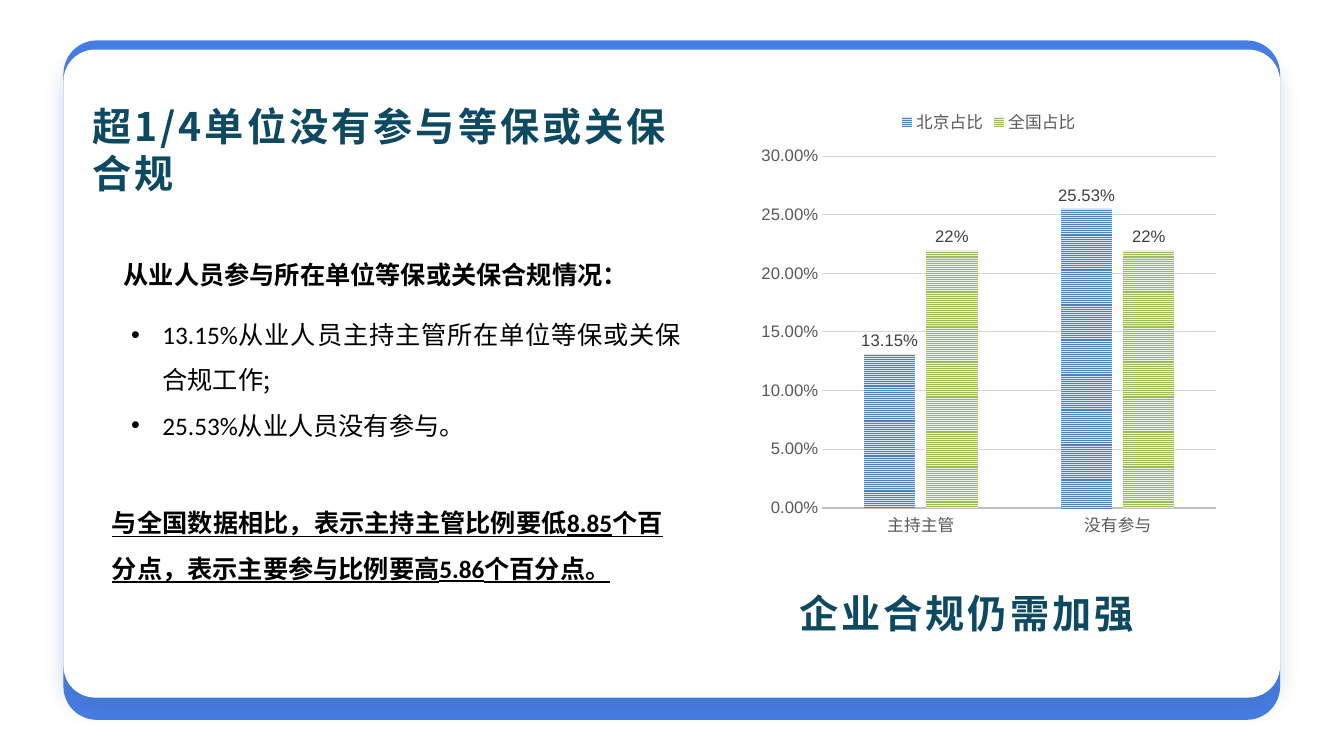
from dataclasses import dataclass

import pptx
import pptx.chart.data
import pptx.dml.color
import pptx.enum.chart
import pptx.enum.dml
import pptx.enum.shapes
import pptx.enum.text
import pptx.oxml
import pptx.oxml.ns
import pptx.util
from pptx.util import Cm, Pt


@dataclass(frozen=True)
class Theme:
    cjk: str = "Noto Sans CJK SC"
    latin: str = "Calibri"
    chart_face: str = "Arial"
    blue: str = "477EE5"
    white: str = "FFFFFF"
    black: str = "000000"
    teal: str = "0D4960"
    axis_text: str = "595959"
    label_text: str = "404040"
    axis_line: str = "BFBFBF"
    grid_line: str = "D9D9D9"
    title_size: float = 28
    body_size: float = 18
    chart_size: float = 11.9


THEME = Theme()
qn = pptx.oxml.ns.qn
ALIGN = pptx.enum.text.PP_ALIGN

TITLE = [[("超1/4单位没有参与等保或关保合规", THEME.cjk)]]
CONCLUSION = [[("企业合规仍需加强", THEME.cjk)]]
HEADING = [[("从业人员参与所在单位等保或关保合规情况：", THEME.cjk)]]
FINDINGS = [
    [("13.15%", THEME.latin), ("从业人员主持主管所在单位等保或关保合规工作;", THEME.cjk)],
    [("25.53%", THEME.latin), ("从业人员没有参与。", THEME.cjk)],
]
COMPARISON = [[
    ("与全国数据相比，表示主持主管比例要低", THEME.cjk),
    ("8.85", THEME.latin),
    ("个百分点，表示主要参与比例要高", THEME.cjk),
    ("5.86", THEME.latin),
    ("个百分点。", THEME.cjk),
]]
CATEGORIES = ["主持主管", "没有参与"]
SERIES = [
    ("北京占比", (0.1315, 0.2553), "0.00%", "4F81BD", "DCE6F2"),
    ("全国占比", (0.22, 0.22), "0%", "9BBB59", "EBF1DE"),
]
CARDS = [
    ((1.6, 1.02, 30.66, 17.12), THEME.blue),
    ((1.6, 1.25, 30.66, 16.33), THEME.white),
]
BOXES = {
    "title": (2.16, 2.49, 15.24, 2.54),
    "heading": (2.03, 6.02, 14.38, 1.27),
    "findings": (3.05, 7.54, 14.38, 3.58),
    "comparison": (2.57, 12.29, 14.38, 2.44),
    "conclusion": (18.95, 14.73, 10.82, 1.45),
    "chart": (18.95, 2.46, 11.94, 11.3),
}
SHADOW = (
    '<a:effectLst xmlns:a="http://schemas.openxmlformats.org/drawingml/2006/main">'
    f'<a:outerShdw blurRad="{Pt(16)}" dist="{Pt(8)}" dir="5400000" algn="t" rotWithShape="0">'
    '<a:srgbClr val="376092"><a:alpha val="23000"/></a:srgbClr>'
    "</a:outerShdw></a:effectLst>"
)


def rgb(value):
    return pptx.dml.color.RGBColor.from_string(value)


def lengths(name):
    return [Cm(value) for value in BOXES[name]]


def place(shape, name):
    shape.left, shape.top, shape.width, shape.height = lengths(name)
    return shape


def style(font, size, color, face=None, bold=None):
    font.size, font.color.rgb, font.bold = Pt(size), rgb(color), bold
    if face:
        font.name = face


def write(box, paragraphs, size=THEME.body_size, color=THEME.black, bold=True,
          underline=None, align=ALIGN.JUSTIFY, line_spacing=1.5,
          margin=0, indent=0, bullet=False, tracking=None):
    frame = box.text_frame
    frame.word_wrap = True
    frame.auto_size = pptx.enum.text.MSO_AUTO_SIZE.SHAPE_TO_FIT_TEXT
    frame.vertical_anchor = pptx.enum.text.MSO_ANCHOR.TOP
    for index, spans in enumerate(paragraphs):
        para = frame.paragraphs[0] if index == 0 else frame.add_paragraph()
        para.alignment, para.line_spacing = align, line_spacing
        para.space_before = Pt(0)
        props = para._p.get_or_add_pPr()
        props.set("marL", str(Cm(margin)))
        props.set("indent", str(Cm(indent)))
        if bullet:
            props.append(props.makeelement(qn("a:buFont"), {"typeface": THEME.chart_face}))
            props.append(props.makeelement(qn("a:buChar"), {"char": "•"}))
        faces = {face for _, face in spans}
        style(para.font, size, color, spans[0][1] if len(faces) == 1 else None, bold)
        para.font.underline = underline
        if tracking:
            props.find(qn("a:defRPr")).set("spc", str(tracking))
        for text, face in spans:
            span = para.add_run()
            span.text = text
            if len(faces) > 1:
                span.font.name = face


def add_cards(page):
    for box, color in CARDS:
        card = page.shapes.add_shape(
            pptx.enum.shapes.MSO_SHAPE.ROUNDED_RECTANGLE, *[Cm(value) for value in box])
        card.adjustments[0] = 0.049
        card.shadow.inherit = False
        card.fill.solid()
        card.fill.fore_color.rgb = rgb(color)
        card.line.fill.background()
        page.shapes.title.element.addprevious(card.element)
    effects = card.element.spPr.find(qn("a:effectLst"))
    effects.getparent().replace(effects, pptx.oxml.parse_xml(SHADOW))


def add_comparison_chart(page):
    kinds = pptx.enum.chart
    data = pptx.chart.data.CategoryChartData()
    data.categories = CATEGORIES
    for name, values, number_format, _, _ in SERIES:
        data.add_series(name, values, number_format)
    chart = page.shapes.add_chart(
        kinds.XL_CHART_TYPE.COLUMN_CLUSTERED, *lengths("chart"), data).chart
    chart.has_title = False
    style(chart.font, THEME.chart_size, THEME.axis_text, THEME.chart_face)
    chart.has_legend = True
    chart.legend.position = kinds.XL_LEGEND_POSITION.TOP
    chart.legend.include_in_layout = False

    plot = chart.plots[0]
    plot.gap_width, plot.overlap, plot.vary_by_categories = 164, -22, False
    for series, (_, _, number_format, front, back) in zip(plot.series, SERIES):
        fill = series.format.fill
        fill.patterned()
        fill.pattern = pptx.enum.dml.MSO_PATTERN.NARROW_HORIZONTAL
        fill.fore_color.rgb, fill.back_color.rgb = rgb(front), rgb(back)
        labels = series.data_labels
        labels.show_value = True
        labels.position = kinds.XL_LABEL_POSITION.OUTSIDE_END
        labels.number_format, labels.number_format_is_linked = number_format, False
        style(labels.font, THEME.chart_size, THEME.label_text, THEME.chart_face)

    for axis in (chart.category_axis, chart.value_axis):
        axis.major_tick_mark = axis.minor_tick_mark = kinds.XL_TICK_MARK.NONE
    base = chart.category_axis.format.line
    base.color.rgb, base.width = rgb(THEME.axis_line), Pt(1.5)
    scale = chart.value_axis
    scale.minimum_scale, scale.maximum_scale, scale.major_unit = 0, 0.3, 0.05
    scale.tick_labels.number_format = "0.00%"
    scale.tick_labels.number_format_is_linked = False
    scale.format.line.fill.background()
    grid = scale.major_gridlines.format.line
    grid.color.rgb, grid.width = rgb(THEME.grid_line), Pt(0.75)


def main():
    deck = pptx.Presentation()
    deck.slide_width, deck.slide_height = Cm(33.87), Cm(19.05)
    page = deck.slides.add_slide(deck.slide_layouts[1])
    add_cards(page)

    headline = {"size": THEME.title_size, "color": THEME.teal,
                "line_spacing": 1, "tracking": 220}
    title = place(page.shapes.title, "title")
    write(title, TITLE, align=ALIGN.LEFT, **headline)
    frame = title.text_frame
    frame.margin_left = frame.margin_right = Cm(0.16)
    frame.margin_top = frame.margin_bottom = Cm(0.08)

    write(page.shapes.add_textbox(*lengths("heading")), HEADING, indent=0.84)
    write(place(page.placeholders[1], "findings"), FINDINGS, bold=False,
          margin=0.79, indent=-0.79, bullet=True)
    write(page.shapes.add_textbox(*lengths("comparison")), COMPARISON, underline=True)
    write(page.shapes.add_textbox(*lengths("conclusion")), CONCLUSION,
          align=ALIGN.CENTER, **headline)
    add_comparison_chart(page)

    for latin in list(page.element.iter(qn("a:latin"))):
        latin.addnext(latin.makeelement(qn("a:ea"), {"typeface": latin.get("typeface")}))
    deck.save("out.pptx")


if __name__ == "__main__":
    main()
